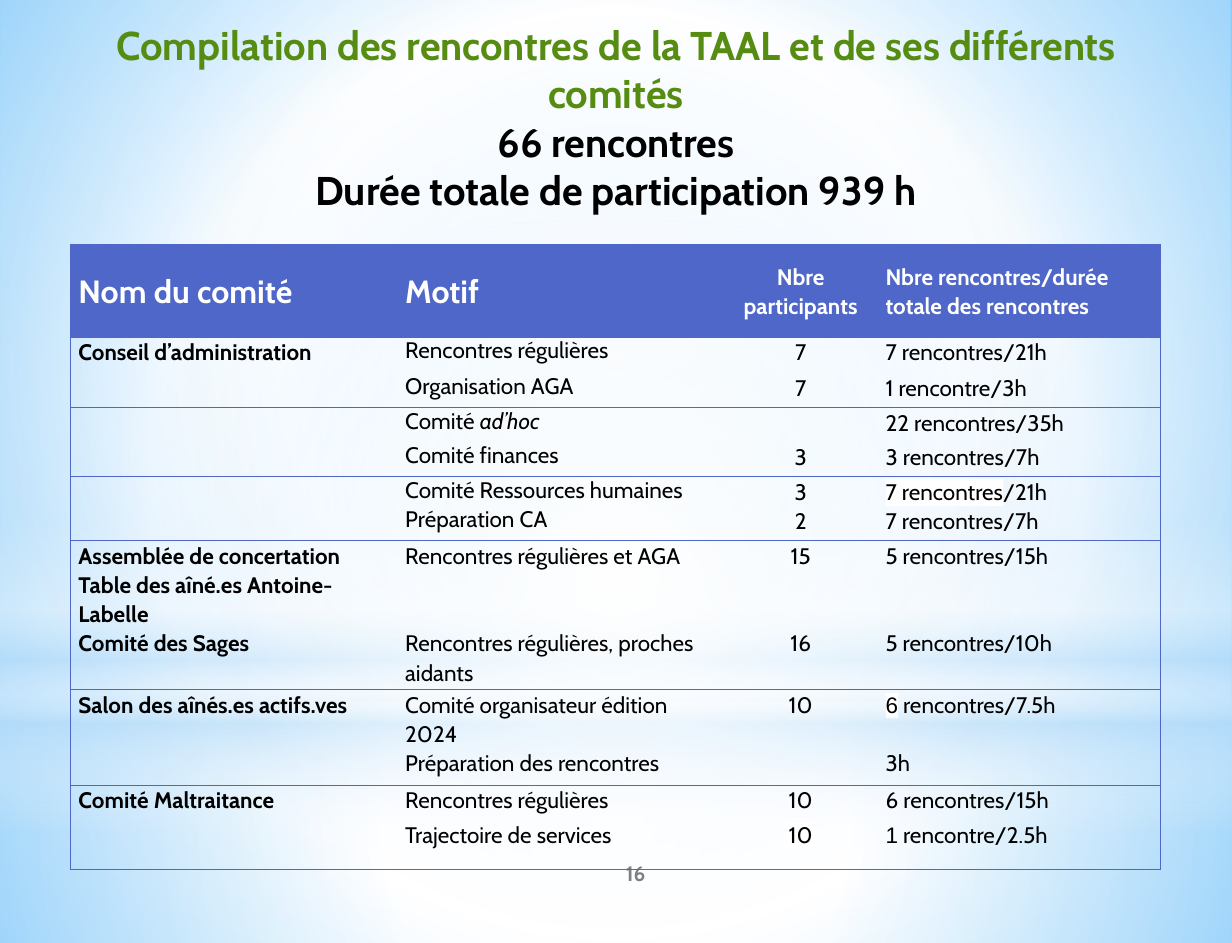
from lxml.etree import SubElement
from pptx import Presentation
from pptx.dml.color import RGBColor
from pptx.enum.shapes import MSO_SHAPE as Shape
from pptx.enum.text import MSO_ANCHOR as Anchor, MSO_AUTO_SIZE as AutoSize, PP_ALIGN as Align
from pptx.oxml.ns import qn
from pptx.util import Inches, Pt

FONT, BLUE, GREEN, GREY = "Cabin", "4E67C8", "568C11", "7F7F7F"
BLACK, WHITE, SKY = "000000", "FFFFFF", "B4DCFA"
SLIDE_W, SLIDE_H = 10.67, 8.17


def rgb(value):
    return RGBColor.from_string(value)


def add_color(parent, value, alpha=100):
    color = SubElement(parent, qn("a:srgbClr"), val=value)
    if alpha < 100:
        SubElement(color, qn("a:alpha"), val=str(alpha * 1000))


def set_gradient(properties, stops, vertical=False):
    """Replace an empty fill with a gradient of (position, colour, opacity) stops."""
    empty = properties.find(qn("a:noFill"))
    gradient = empty.makeelement(qn("a:gradFill"), {"rotWithShape": "1"})
    stop_list = SubElement(gradient, qn("a:gsLst"))
    for position, color, *alpha in stops:
        stop = SubElement(stop_list, qn("a:gs"), pos=str(position * 1000))
        add_color(stop, color, *alpha)
    if vertical:
        SubElement(gradient, qn("a:lin"), ang="5400000", scaled="0")
    else:
        circle = SubElement(gradient, qn("a:path"), path="circle")
        SubElement(circle, qn("a:fillToRect"), l="50000", t="50000", r="50000", b="50000")
    properties.replace(empty, gradient)


class SlideBuilder:
    def __init__(self, slide):
        self.slide = slide

    def background(self, stops):
        self.slide.background.fill.background()
        set_gradient(self.slide._element.find(".//" + qn("p:bgPr")), stops)

    def glow(self, kind, top, height, stops, vertical=False):
        glow = self.slide.shapes.add_shape(
            kind, 0, Inches(top), Inches(SLIDE_W), Inches(height))
        glow.shadow.inherit = False
        glow.line.fill.background()
        glow.fill.background()
        set_gradient(glow._element.spPr, stops, vertical)

    def run(self, paragraph, text, size, color=BLACK, bold=False, italic=False,
            font=FONT, highlight=None):
        run = paragraph.add_run()
        run.text = text
        run.font.size, run.font.bold, run.font.italic = Pt(size), bold, italic
        run.font.color.rgb = rgb(color)
        if highlight:
            add_color(SubElement(run.font._element, qn("a:highlight")), highlight)
        run.font.name = font

    def frame(self, frame, anchor):
        frame.word_wrap, frame.auto_size = True, AutoSize.NONE
        frame.vertical_anchor = anchor
        frame.margin_left = frame.margin_right = Inches(0.11)
        frame.margin_top = frame.margin_bottom = Inches(0.05)
        paragraph = frame.paragraphs[0]
        paragraph.alignment = Align.CENTER
        return paragraph

    def page_number(self, text, left, top, width, height):
        box = self.slide.shapes.add_textbox(
            Inches(left), Inches(top), Inches(width), Inches(height))
        self.run(self.frame(box.text_frame, Anchor.MIDDLE), text, 13, GREY, bold=True)

    def title(self, lines, left, top, width, height):
        title = self.slide.shapes.title
        title.left, title.top = Inches(left), Inches(top)
        title.width, title.height = Inches(width), Inches(height)
        paragraph = self.frame(title.text_frame, Anchor.TOP)
        for index, (text, color) in enumerate(lines):
            if index:
                paragraph.add_line_break()
            self.run(paragraph, text, 25, color, bold=True)
        # Bring the title in front of the glows
        self.slide.shapes._spTree.append(title._element)

    def table(self, left, top, widths, heights):
        table = self.slide.shapes.add_table(
            len(heights), len(widths), Inches(left), Inches(top),
            Inches(sum(widths)), Inches(sum(heights))).table
        table.first_row = table.horz_banding = False
        for column, width in zip(table.columns, widths):
            column.width = Inches(width)
        for row, height in zip(table.rows, heights):
            row.height = Inches(height)
        return table

    def cell(self, cell, runs, sides, size=14, color=BLACK, bold=False, fill=None,
             align=Align.LEFT, spacing=1.07, anchor=Anchor.TOP):
        cell.margin_left = cell.margin_right = Inches(0.07)
        cell.margin_top = cell.margin_bottom = 0
        cell.vertical_anchor = anchor
        for side in "LRTB":
            border = SubElement(cell._tc.get_or_add_tcPr(), qn("a:ln" + side), w=str(Pt(0.75)))
            if side in sides:
                add_color(SubElement(border, qn("a:solidFill")), BLUE)
            else:
                SubElement(border, qn("a:noFill"))
        if fill:
            cell.fill.solid()
            cell.fill.fore_color.rgb = rgb(fill)
        else:
            cell.fill.background()
        paragraph = cell.text_frame.paragraphs[0]
        paragraph.alignment, paragraph.line_spacing = align, spacing
        paragraph.font.size = Pt(size)
        if not runs:
            SubElement(paragraph._p, qn("a:endParaRPr"), sz=str(size * 100))
        for text, style in runs:
            self.run(paragraph, text, size, color, bold, **style)


def plain(text):
    return [(text, {})] if text else []


MARKED = {"highlight": WHITE}
HEADERS = [("Nom du comité", 20), ("Motif", 20), ("Nbre participants", 14),
           ("Nbre rencontres/durée totale des rencontres", 14)]
# Committee, purpose, participants, meetings and total time
MEETINGS = [
    ("Conseil d’administration", "Rencontres régulières", "7", "7 rencontres/21h"),
    ("", "Organisation AGA", "7", "1 rencontre/3h"),
    ("", [("Comité ", {}), ("ad’hoc", {"italic": True})], "", "22 rencontres/35h"),
    ("", "Comité finances", "3", "3 rencontres/7h"),
    ("", "Comité Ressources humaines", "3", [("7 rencontres", MARKED), ("/21h", {})]),
    ("", "Préparation CA", "2", "7 rencontres/7h"),
    ("Assemblée de concertation Table des aîné.es Antoine-Labelle",
     "Rencontres régulières et AGA", "15", "5 rencontres/15h"),
    ("Comité des Sages", "Rencontres régulières, proches aidants", "16", "5 rencontres/10h"),
    ("Salon des aînés.es actifs.ves", "Comité organisateur édition 2024", "10",
     [("6", {"font": "Arial", **MARKED}), (" rencontres/7.5h", {})]),
    ("", "Préparation des rencontres", "", "3h"),
    ("Comité Maltraitance", "Rencontres régulières", "10", "6 rencontres/15h"),
    ("", "Trajectoire de services", [("10", MARKED)],
     [("1", {"font": "Arial"}), (" rencontre/2.5h", {})]),
]
COLUMN_WIDTHS = [2.83, 2.83, 1.33, 2.45]
ROW_HEIGHTS = [0.8, 0.31, 0.3, 0.3, 0.3, 0.25, 0.3, 0.75, 0.53, 0.51, 0.32, 0.32, 0.41]


def main():
    deck = Presentation()
    deck.slide_width, deck.slide_height = Inches(SLIDE_W), Inches(SLIDE_H)
    page = SlideBuilder(deck.slides.add_slide(deck.slide_layouts[5]))

    # Sky background
    page.background([(0, "99D4FE"), (60, WHITE), (100, "54BDFF")])
    page.glow(Shape.RECTANGLE, 6.08, 2.09, [(0, WHITE, 91), (37, WHITE, 76), (100, SKY, 79)])
    page.glow(Shape.RECTANGLE, 0, 6.08, [(0, WHITE, 89), (48, WHITE, 62), (100, SKY, 79)])
    page.glow(Shape.RECTANGLE, 4.49, 2.72,
              [(0, WHITE, 0), (29, WHITE, 30), (45, SKY, 40), (55, WHITE, 26),
               (65, SKY, 60), (100, WHITE, 0)], vertical=True)
    page.glow(Shape.OVAL, 1.91, 6.08, [(0, WHITE), (56, WHITE, 0), (100, WHITE, 0)])

    # Page number and title
    page.page_number("16", 4.44, 7.35, 2.13, 0.43)
    page.title([("Compilation des rencontres de la TAAL et de ses différents comités", GREEN),
                ("66 rencontres", BLACK),
                ("Durée totale de participation 939 h", BLACK)], 0.61, 0.13, 9.45, 1.5)

    # Meetings table, ruled off every two rows
    meetings = page.table(0.61, 2.12, COLUMN_WIDTHS, ROW_HEIGHTS)
    outer_sides = ["L", "", "", "R"]
    aligns = [Align.LEFT, Align.LEFT, Align.CENTER, Align.LEFT]
    for column, (label, size) in enumerate(HEADERS):
        page.cell(meetings.cell(0, column), plain(label), outer_sides[column] + "TB", size,
                  WHITE, True, BLUE, aligns[column], anchor=Anchor.MIDDLE)
    for row, entry in enumerate(MEETINGS, 1):
        rule = "T" if row % 2 else "B"
        for column, content in enumerate(entry):
            single = row == len(MEETINGS) or (column == 1 and row <= 6)
            page.cell(meetings.cell(row, column),
                      plain(content) if isinstance(content, str) else content,
                      outer_sides[column] + rule, bold=column == 0,
                      align=aligns[column], spacing=1.0 if single else 1.07)

    deck.save("out.pptx")


if __name__ == "__main__":
    main()
